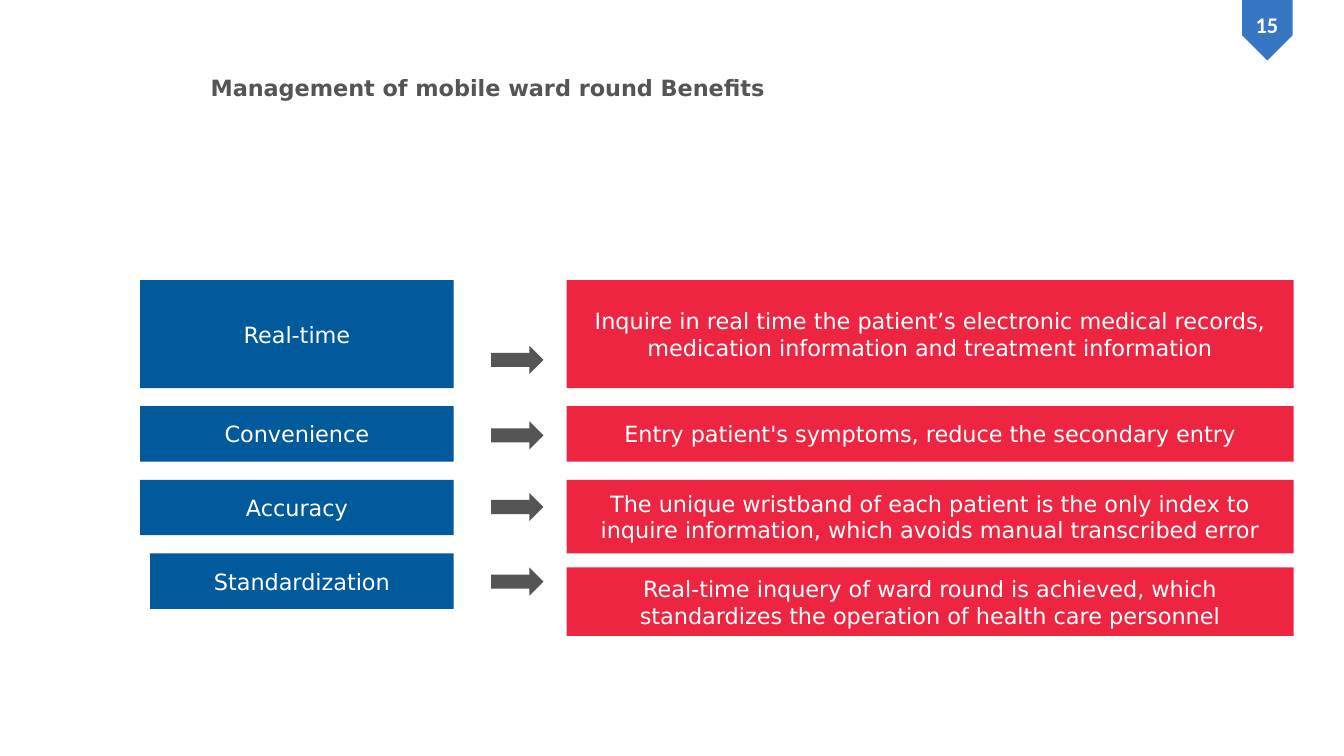
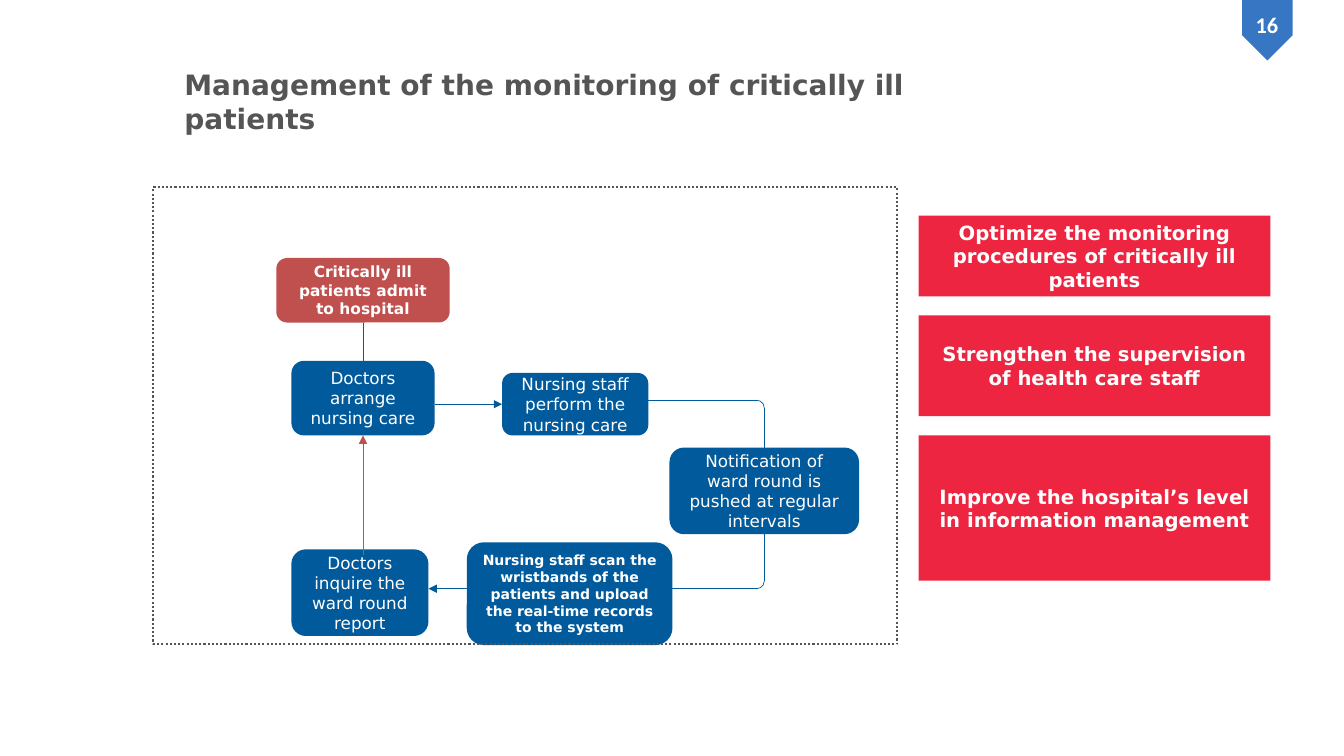
"""Builds two slides on mobile ward rounds and the monitoring of critically ill patients."""
from dataclasses import dataclass

from lxml.etree import SubElement
from pptx import Presentation
from pptx.dml.color import RGBColor
from pptx.enum.dml import MSO_LINE
from pptx.enum.shapes import MSO_CONNECTOR, MSO_SHAPE
from pptx.enum.text import MSO_ANCHOR, PP_ALIGN
from pptx.oxml.ns import qn
from pptx.shapes.autoshape import Shape
from pptx.shapes.connector import Connector
from pptx.slide import Slide
from pptx.util import Inches, Pt

BLUE = RGBColor(0x00, 0x5A, 0x9B)
RED = RGBColor(0xED, 0x25, 0x41)
BRICK = RGBColor(0xC0, 0x50, 0x4D)
GREY = RGBColor(0x55, 0x55, 0x55)
BADGE = RGBColor(0x37, 0x76, 0xC3)
WHITE = RGBColor(0xFF, 0xFF, 0xFF)
FONT = "DejaVu Sans"
GAP = 0.18
BEND = 0.15

TOP, LEFT, BOTTOM = 0, 1, 2


@dataclass
class Box:
    text: str
    left: float
    top: float
    width: float
    height: float
    color: RGBColor = BLUE
    size: int = 16
    bold: bool = False
    kind: MSO_SHAPE = MSO_SHAPE.RECTANGLE


@dataclass
class Row:
    label: str
    detail: str
    height: float
    arrow: float
    indent: float = 0
    tall: float = 0
    shift: float = 0


@dataclass
class Panel:
    text: str
    height: float


ROWS = [
    Row("Real-time", "Inquire in real time the patient’s electronic medical records, "
        "medication information and treatment information", 1.07, 3.43),
    Row("Convenience", "Entry patient's symptoms, reduce the secondary entry", 0.55, 4.18),
    Row("Accuracy", "The unique wristband of each patient is the only index to inquire "
        "information, which avoids manual transcribed error", 0.55, 4.89, tall=0.73),
    Row("Standardization", "Real-time inquery of ward round is achieved, which "
        "standardizes the operation of health care personnel", 0.55, 5.63,
        indent=0.1, tall=0.68, shift=0.14),
]

PANELS = [
    Panel("Optimize the monitoring procedures of critically ill patients", 0.8),
    Panel("Strengthen the supervision of health care staff", 1),
    Panel("Improve the hospital’s level in information management", 1.44),
]

ROUND = MSO_SHAPE.ROUNDED_RECTANGLE
STEPS = {
    "admit": Box("Critically ill patients admit to hospital",
                 2.74, 2.56, 1.72, 0.64, BRICK, 11, True, ROUND),
    "arrange": Box("Doctors arrange nursing care", 2.89, 3.58, 1.42, 0.74, size=12, kind=ROUND),
    "perform": Box("Nursing staff perform the nursing care",
                   4.98, 3.7, 1.45, 0.62, size=12, kind=ROUND),
    "notify": Box("Notification of ward round is pushed at regular intervals",
                  6.64, 4.44, 1.88, 0.86, size=12, kind=ROUND),
    "scan": Box("Nursing staff scan the wristbands of the patients and upload "
                "the real-time records to the system",
                4.63, 5.38, 2.04, 1.02, size=10, bold=True, kind=ROUND),
    "inquire": Box("Doctors inquire the ward round report",
                   2.89, 5.45, 1.36, 0.86, size=12, kind=ROUND),
}


def add_form(slide: Slide, kind: MSO_SHAPE, left: float, top: float,
             width: float, height: float, color: RGBColor | None = None) -> Shape:
    """Adds a flat preset shape, filled without a line or left empty."""
    form = slide.shapes.add_shape(kind, Inches(left), Inches(top), Inches(width), Inches(height))
    form.shadow.inherit = False
    form.line.fill.background()
    if color is None:
        form.fill.background()
    else:
        form.fill.solid()
        form.fill.fore_color.rgb = color
    return form


def set_text(shape: Shape, text: str, size: int, color: RGBColor, bold: bool,
             align: PP_ALIGN = PP_ALIGN.CENTER, name: str = FONT) -> None:
    """Writes one wrapped paragraph into a shape."""
    frame = shape.text_frame
    frame.word_wrap = True
    line = frame.paragraphs[0]
    line.text = text
    line.alignment = align
    font = line.font
    font.name, font.size, font.bold = name, Pt(size), bold
    font.color.rgb = color


def add_label(slide: Slide, left: float, top: float, width: float, height: float) -> Shape:
    """Adds an empty text box."""
    return slide.shapes.add_textbox(Inches(left), Inches(top), Inches(width), Inches(height))


def add_box(slide: Slide, box: Box) -> Shape:
    """Draws a filled box with centred white text."""
    form = add_form(slide, box.kind, box.left, box.top, box.width, box.height, box.color)
    set_text(form, box.text, box.size, WHITE, box.bold)
    form.text_frame.vertical_anchor = MSO_ANCHOR.MIDDLE
    return form


def add_line(slide: Slide, start: tuple[float, float], end: tuple[float, float],
             color: RGBColor = BLUE, arrow: bool = False) -> Connector:
    """Draws a thin straight connector, with an arrowhead on request."""
    x, y = start
    to_x, to_y = end
    line = slide.shapes.add_connector(MSO_CONNECTOR.STRAIGHT, Inches(x), Inches(y),
                                      Inches(to_x), Inches(to_y))
    line.line.color.rgb = color
    line.line.width = Pt(0.5)
    if arrow:
        SubElement(line.line._get_or_add_ln(), qn("a:tailEnd"), type="triangle")
    SubElement(line._element.spPr, qn("a:effectLst"))
    return line


def add_bend(slide: Slide, right: float, top: float, angle: int) -> None:
    """Draws a rounded corner that ends at the right edge."""
    arc = add_form(slide, MSO_SHAPE.ARC, right - BEND, top, BEND, BEND)
    arc.rotation = angle
    arc.line.color.rgb = BLUE
    arc.line.width = Pt(0.5)


def add_slide(deck: Presentation, number: int, title: str, left: float, top: float,
              width: float, size: int) -> Slide:
    """Adds a blank slide with the number badge and the title."""
    slide = deck.slides.add_slide(deck.slide_layouts[6])
    add_form(slide, MSO_SHAPE.PENTAGON, 12.27, 0.05, 0.6, 0.5, BADGE).rotation = 90
    set_text(add_label(slide, 12.26, 0.06, 0.61, 0.37), str(number), 16, WHITE, True,
             name="Calibri")
    set_text(add_label(slide, left, top, width, 0.4), title, size, GREY, True, PP_ALIGN.LEFT)
    return slide


def add_rows(slide: Slide) -> None:
    """Draws each benefit, its arrow and its detail."""
    top = 2.78
    for row in ROWS:
        add_box(slide, Box(row.label, 1.39 + row.indent, top, 3.11 - row.indent, row.height))
        add_box(slide, Box(row.detail, 5.62, top + row.shift, 7.21,
                           row.tall or row.height, RED))
        add_form(slide, MSO_SHAPE.RIGHT_ARROW, 4.87, row.arrow, 0.52, 0.28, GREY)
        top += row.height + GAP


def add_flow(slide: Slide) -> None:
    """Draws the monitoring cycle inside its dotted frame."""
    step = {key: add_box(slide, box) for key, box in STEPS.items()}

    enter = add_line(slide, (3.6, 3.2), (3.6, 3.58))
    enter.begin_connect(step["admit"], BOTTOM)
    enter.end_connect(step["arrange"], TOP)
    care = add_line(slide, (4.31, 4.01), (4.98, 4.01), arrow=True)
    care.end_connect(step["perform"], LEFT)

    turn, high, low = 7.58, 3.97, 5.84
    add_line(slide, (6.43, high), (turn - BEND / 2, high))
    add_bend(slide, turn, high, 0)
    drop = add_line(slide, (turn, high + BEND / 2), (turn, 4.44))
    drop.end_connect(step["notify"], TOP)
    leave = add_line(slide, (turn, 5.3), (turn, low - BEND / 2))
    leave.begin_connect(step["notify"], BOTTOM)
    add_bend(slide, turn, low - BEND, 90)
    add_line(slide, (turn - BEND / 2, low), (6.67, low))

    add_line(slide, (4.63, low), (4.25, low), arrow=True)
    back = add_line(slide, (3.6, 5.51), (3.6, 4.32), BRICK, True)
    back.end_connect(step["arrange"], BOTTOM)

    frame = add_form(slide, MSO_SHAPE.RECTANGLE, 1.52, 1.86, 7.38, 4.53)
    frame.line.color.rgb = GREY
    frame.line.width = Pt(1.5)
    frame.line.dash_style = MSO_LINE.ROUND_DOT


def add_panels(slide: Slide) -> None:
    """Stacks the aims beside the cycle."""
    top = 2.14
    for panel in PANELS:
        add_box(slide, Box(panel.text, 9.11, top, 3.49, panel.height, RED, 14, True))
        top += panel.height + 0.19


def main() -> None:
    """Builds and saves the deck."""
    deck = Presentation()
    deck.slide_width, deck.slide_height = Inches(13.33), Inches(7.5)
    add_rows(add_slide(deck, 15, "Management of mobile ward round Benefits",
                       1.99, 0.69, 6.5, 16))
    cycle = add_slide(deck, 16, "Management of the monitoring of critically ill patients",
                      1.73, 0.62, 8, 20)
    add_flow(cycle)
    add_panels(cycle)
    deck.save("out.pptx")


if __name__ == "__main__":
    main()
